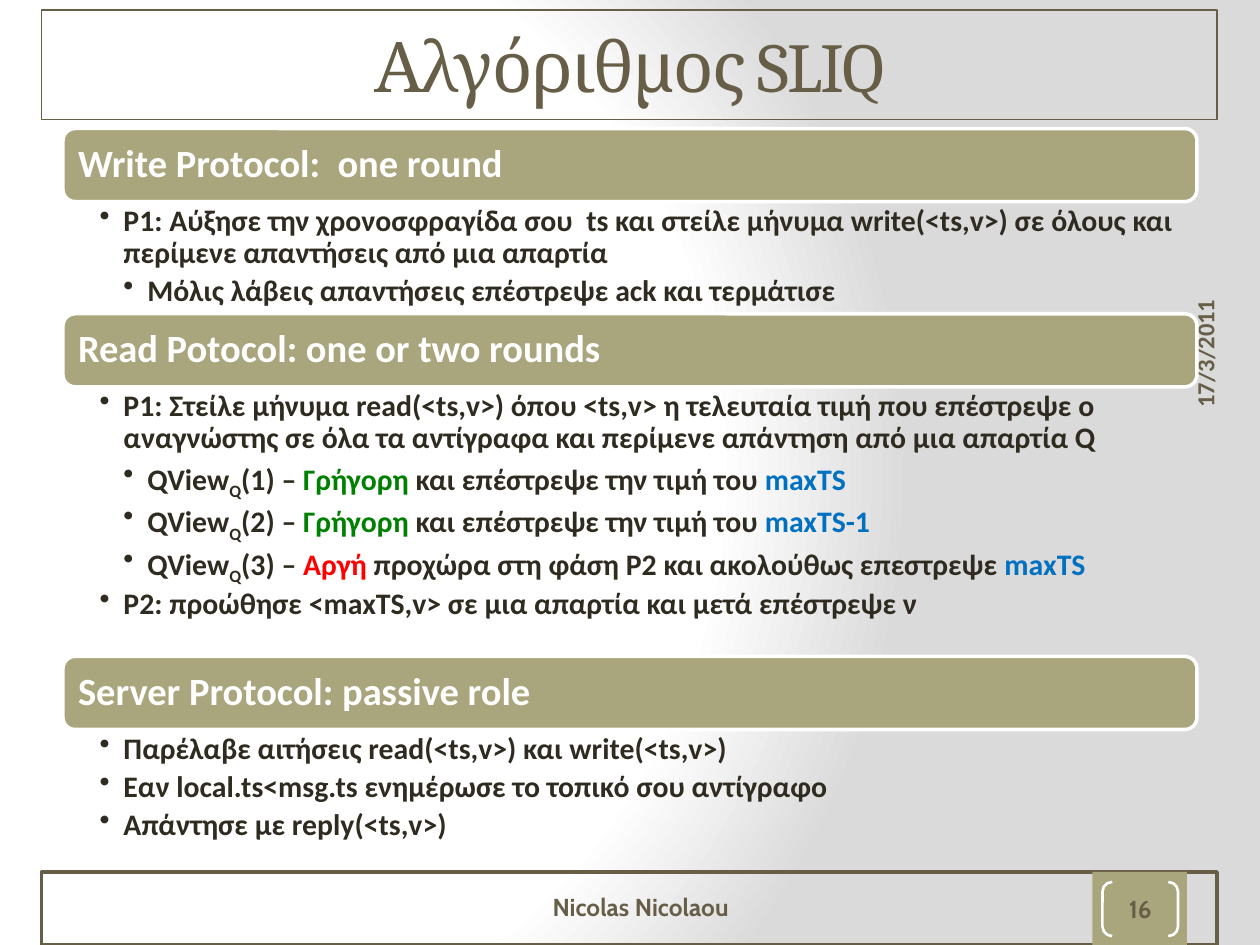
from lxml import etree
from pptx import Presentation, util as u
from pptx.dml.color import RGBColor
from pptx.enum import shapes, text
from pptx.oxml import parse_xml
from pptx.oxml.ns import qn

THEME = dict(
    brown="675E47", sage="A9A57C", white="FFFFFF", ink="2F2B20", grey="DADADA",
    green="008000", red="FF0000", blue="0070C0",
    head="Cambria", body="Calibri", foot="Cabin",
    title=40, bar=22, item=17, small=14,
)


def view(num, speed, hue, rest, stamp):
    return 2, [("QView", "ink"), ("Q", "ink", "sub"), (f"({num}) – ", "ink"),
               (speed, hue), (rest, "ink"), (stamp, "blue")]


def plain(level, words):
    return level, [(words, "ink")]


QUICK = " και επέστρεψε την τιμή του "
# heading, height of the list below it, items
PARTS = [
    ("Write Protocol:  one round", 0.89, [
        plain(1, "P1: Αύξησε την χρονοσφραγίδα σου  ts και στείλε μήνυμα "
                 "write(<ts,v>) σε όλους και περίμενε απαντήσεις από μια απαρτία"),
        plain(2, "Μόλις λάβεις απαντήσεις επέστρεψε ack και τερμάτισε"),
    ]),
    ("Read Potocol: one or two rounds", 2.14, [
        plain(1, "P1: Στείλε μήνυμα read(<ts,v>) όπου <ts,v> η τελευταία τιμή που "
                 "επέστρεψε ο αναγνώστης σε όλα τα αντίγραφα και περίμενε "
                 "απάντηση από μια απαρτία Q"),
        view(1, "Γρήγορη", "green", QUICK, "maxTS"),
        view(2, "Γρήγορη", "green", QUICK, "maxTS-1"),
        view(3, "Αργή ", "red", "προχώρα στη φάση P2 και ακολούθως επεστρεψε ", "maxTS"),
        plain(1, "P2: προώθησε <maxTS,v> σε μια απαρτία και μετά επέστρεψε ν"),
    ]),
    ("Server Protocol: passive role", 0.95, [
        plain(1, "Παρέλαβε αιτήσεις read(<ts,v>) και write(<ts,v>)"),
        plain(1, "Εαν local.ts<msg.ts ενημέρωσε το τοπικό σου αντίγραφο"),
        plain(1, "Aπάντησε με reply(<ts,v>)"),
    ]),
]
LEFT, TOP, WIDE, BAR, PAD, STEP = 0.5, 1.02, 9, 0.58, 0.03, 0.19

deck = Presentation()
deck.slide_width, deck.slide_height = u.Inches(10), u.Inches(7.5)
slide = deck.slides.add_slide(deck.slide_layouts[6])


def color(name):
    return RGBColor.from_string(THEME[name])


def shade():
    """Lay a round white-to-grey gradient behind the slide."""
    stops = "".join(
        f'<a:gs pos="{pos}000"><a:srgbClr val="{THEME[hue]}"/></a:gs>'
        for pos, hue in [(0, "white"), (75, "white"), (100, "grey")])
    slide.element.cSld.insert(0, parse_xml(
        '<p:bg xmlns:p="http://schemas.openxmlformats.org/presentationml/2006/main" '
        'xmlns:a="http://schemas.openxmlformats.org/drawingml/2006/main"><p:bgPr>'
        f'<a:gradFill rotWithShape="1"><a:gsLst>{stops}</a:gsLst><a:path path="circle">'
        '<a:fillToRect l="20000" t="50000" r="100000" b="50000"/></a:path></a:gradFill>'
        '<a:effectLst/></p:bgPr></p:bg>'))


def draw(kind, box, fill=None, line=None, width=1):
    shape = slide.shapes.add_shape(kind, *map(u.Inches, box))
    shape.shadow.inherit = False
    if fill:
        shape.fill.solid()
        shape.fill.fore_color.rgb = color(fill)
    else:
        shape.fill.background()
    if line:
        shape.line.color.rgb = color(line)
        shape.line.width = u.Pt(width)
    else:
        shape.line.fill.background()
    return shape


def setup(shape, pads=None, middle=True):
    """Ready a text frame; pads are left, top, right, bottom in inches."""
    frame = shape.text_frame
    frame.word_wrap = True
    frame.vertical_anchor = text.MSO_ANCHOR.MIDDLE if middle else text.MSO_ANCHOR.TOP
    if pads:
        (frame.margin_left, frame.margin_top,
         frame.margin_right, frame.margin_bottom) = map(u.Inches, pads)
    return frame


def label(box, pads=None, middle=True):
    return setup(slide.shapes.add_textbox(*map(u.Inches, box)), pads, middle)


def write(para, words, size, hue, face="body", bold=True):
    run = para.add_run()
    run.text = words
    font = run.font
    font.size, font.name, font.bold = u.Pt(THEME[size]), THEME[face], bold
    font.color.rgb = color(hue)
    return run


def center(frame, *style, **more):
    para = frame.paragraphs[0]
    para.alignment = text.PP_ALIGN.CENTER
    return write(para, *style, **more)


def space(para, after):
    """Set tight lines and a gap below, in percent of the line."""
    para.line_spacing = 0.9
    props = para._p.get_or_add_pPr()
    gap = etree.SubElement(props, qn("a:spcAft"))
    etree.SubElement(gap, qn("a:spcPct")).set("val", str(after * 1000))
    return props


def listing(frame, items):
    for i, (level, runs) in enumerate(items):
        para = frame.add_paragraph() if i else frame.paragraphs[0]
        para.level = level
        props = space(para, 20)
        props.set("marL", str(u.Inches(STEP * level)))
        props.set("indent", str(-u.Inches(STEP)))
        etree.SubElement(props, qn("a:buChar")).set("char", "•")
        for words, hue, *sub in runs:
            run = write(para, words, "item", hue)
            if sub:
                run.font._element.set("baseline", "-25000")


def main():
    kind = shapes.MSO_SHAPE
    shade()
    draw(kind.RECTANGLE, (0.33, 6.92, 9.33, 0.58), line="brown", width=2)
    draw(kind.RECTANGLE, (8.67, 6.92, 0.75, 0.58), fill="sage")

    title = draw(kind.RECTANGLE, (0.33, 0.08, 9.33, 0.87), line="brown")
    run = center(setup(title), "Αλγόριθμος SLIQ", "title", "brown", "head", bold=False)
    run.font._element.set("spc", "-100")

    date = slide.shapes.add_textbox(*map(u.Inches, (8.26, 1.8, 2.67, 0.4)))
    date.rotation = 270
    write(setup(date, middle=False).paragraphs[0], "17/3/2011", "small", "brown")

    center(label((2.92, 7, 4.33, 0.4)), "Nicolas Nicolaou", "small", "brown", "foot")
    page = draw(kind.DOUBLE_BRACKET, (8.75, 7, 0.6, 0.43), line="white", width=1.5)
    page.adjustments[0] = 0.18
    center(setup(page, (0, 0, 0, 0)), "16", "small", "brown", "foot")

    top = TOP
    for heading, tall, items in PARTS:
        draw(kind.ROUNDED_RECTANGLE, (LEFT, top, WIDE, BAR), "sage", "white", 2)
        inner = (LEFT + PAD, top + PAD, WIDE - 2 * PAD, BAR - 2 * PAD)
        para = label(inner, (0.09,) * 4).paragraphs[0]
        space(para, 35)
        write(para, heading, "bar", "white")
        top += BAR
        listing(label((LEFT, top, WIDE, tall), (0.29, 0.03, 0.17, 0.03), False), items)
        top += tall
    deck.save("out.pptx")


if __name__ == "__main__":
    main()
